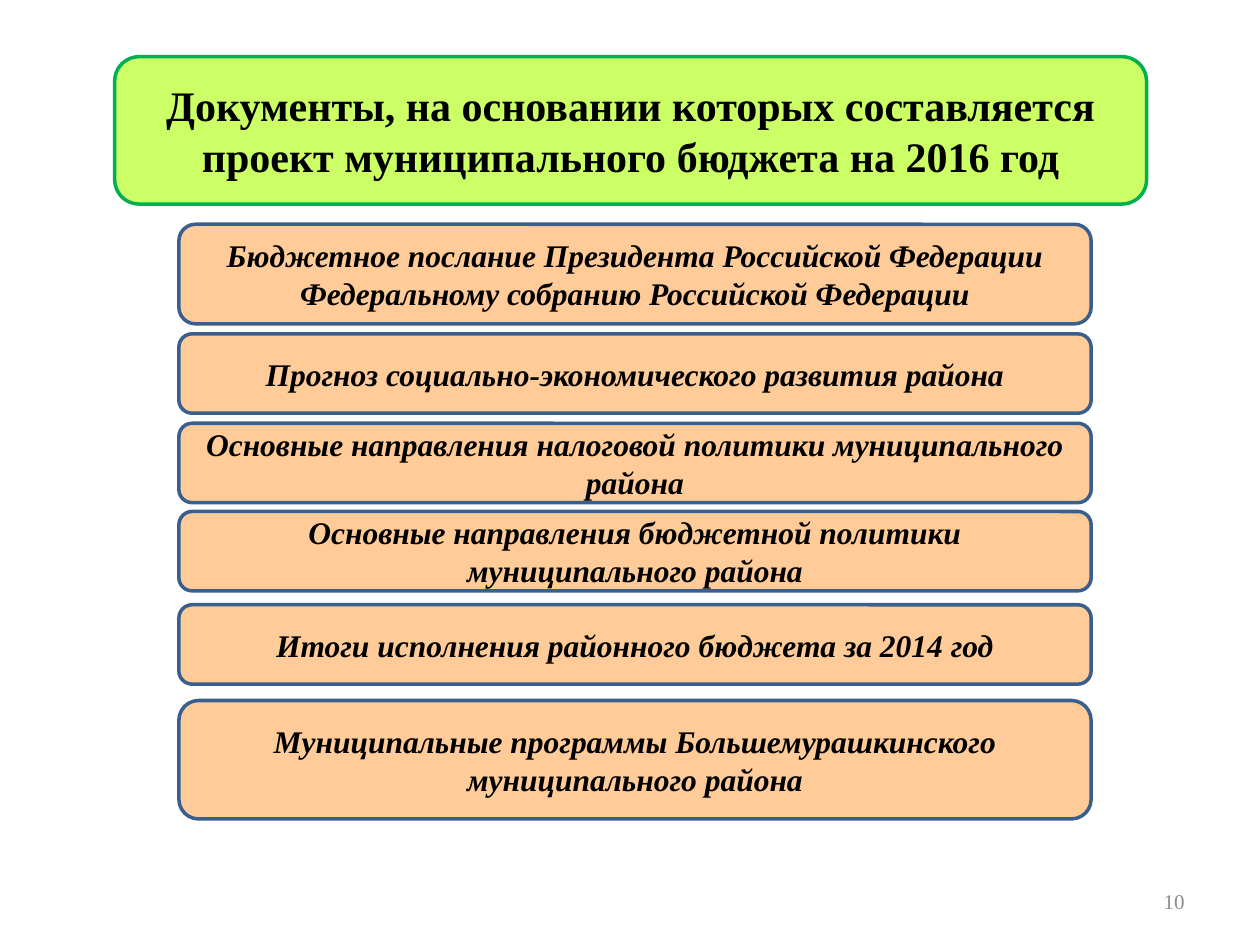
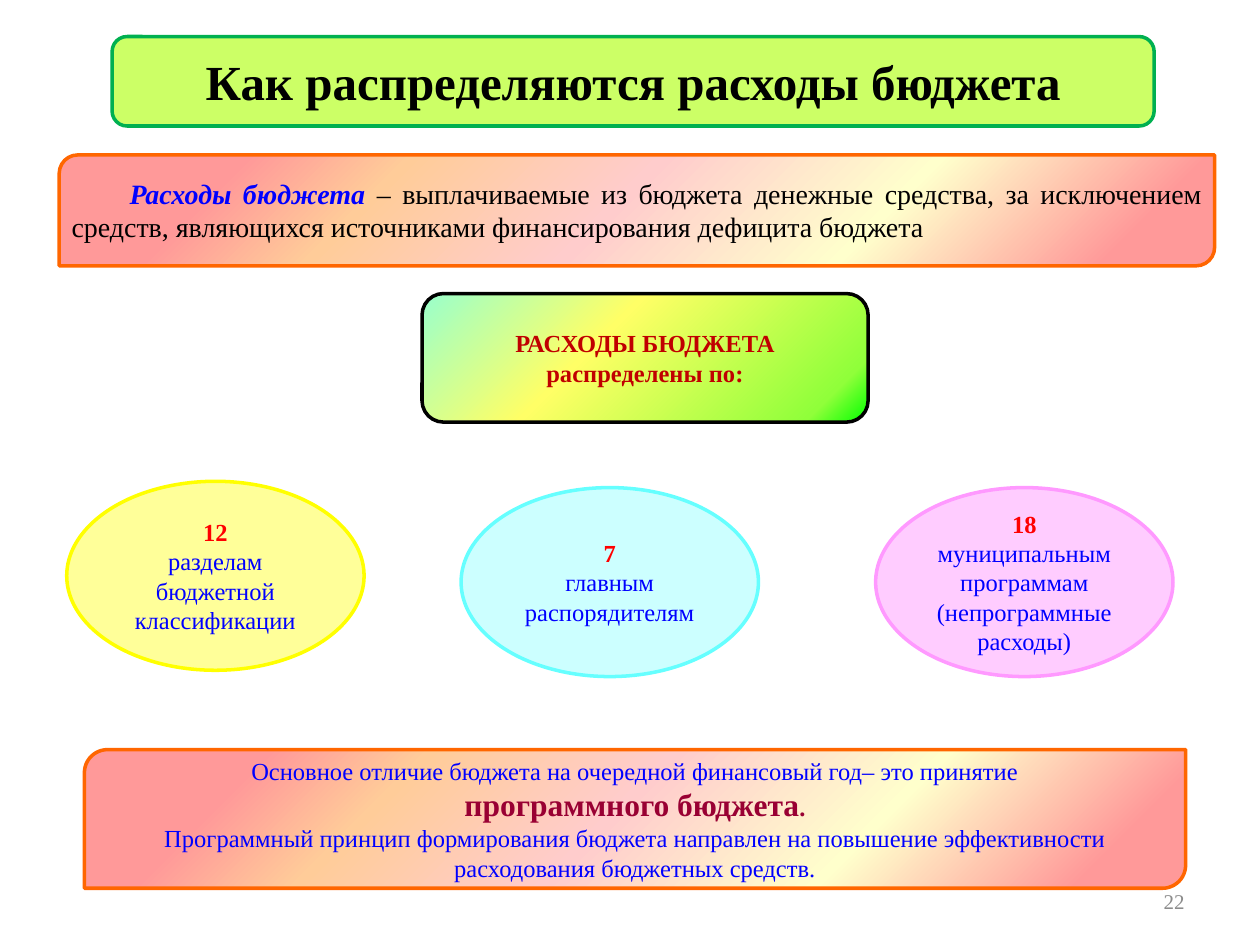
from dataclasses import dataclass

from lxml.etree import SubElement
from pptx import Presentation
from pptx.dml.color import RGBColor
from pptx.enum.shapes import MSO_SHAPE as Shape
from pptx.enum.text import MSO_ANCHOR as Anchor, PP_ALIGN as Align
from pptx.oxml.ns import qn
from pptx.util import Pt

PX = 9144  # 100 px to the inch
FONT = "Times New Roman"
BLACK, BLUE, RED, GREY = "000000", "0000FF", "FF0000", "8C8C8C"

PEACH_BANDS = 45, [(15, "FF9999"), (28, "FFCC99"), (48, "FFCCCC"),
                   (70, "FFFFCC"), (91, "FF9999")]
GREEN_BANDS = 225, [(0, "00FF00"), (11, "90FF3A"), (61, "FFFF66"),
                    (100, "99FFCC")]


@dataclass
class Style:
    size: int
    color: str = BLACK
    bold: bool = False
    italic: bool = False

    def apply(self, font):
        font.name = FONT
        font.size = Pt(self.size)
        font.bold = self.bold
        font.italic = self.italic
        font.color.rgb = rgb(self.color)


DOCUMENT = Style(18, bold=True, italic=True)
TERM = Style(16, BLUE, bold=True, italic=True)
DEFINITION = Style(16)
HEADING = Style(14, "C00000", bold=True)
COUNT = Style(14, RED, bold=True)
NOTE = Style(14, BLUE)
ACCENT = Style(18, "990033", bold=True)
ACCENT_STOP = Style(14, "990033", bold=True)
PAGE = Style(12, GREY)


def rgb(color):
    return RGBColor.from_string(color)


class Deck:
    def __init__(self, width, height):
        self.file = Presentation()
        self.file.slide_width = width * PX
        self.file.slide_height = height * PX
        self.slide = None

    def new_slide(self, page):
        self.slide = self.file.slides.add_slide(self.file.slide_layouts[6])
        self.label((717, 695, 233, 40), [[(page, PAGE)]], Align.RIGHT)

    def fill_text(self, frame, paragraphs, align, anchor=Anchor.MIDDLE, indent=0):
        """Fill a frame; each paragraph is a list of (text, style) runs."""
        frame.word_wrap = True
        frame.vertical_anchor = anchor
        for number, runs in enumerate(paragraphs):
            paragraph = frame.paragraphs[0] if number == 0 else frame.add_paragraph()
            paragraph.alignment = align
            if indent:
                paragraph._p.get_or_add_pPr().set("indent", str(indent * PX))
            for text, style in runs:
                run = paragraph.add_run()
                run.text = text
                style.apply(run.font if len(runs) > 1 else paragraph.font)

    def label(self, area, paragraphs, align, **layout):
        box = self.slide.shapes.add_textbox(*(n * PX for n in area))
        self.fill_text(box.text_frame, paragraphs, align, **layout)

    def panel(self, kind, area, fill, line, paragraphs=()):
        """Draw an outlined shape; fill is a colour or (angle, stops)."""
        shape = self.slide.shapes.add_shape(kind, *(n * PX for n in area))
        shape.shadow.inherit = False
        if isinstance(fill, str):
            shape.fill.solid()
            shape.fill.fore_color.rgb = rgb(fill)
        else:
            self.blend(shape, *fill)
        shape.line.color.rgb = rgb(line)
        shape.line.width = Pt(2)
        self.fill_text(shape.text_frame, paragraphs, Align.CENTER)

    def blend(self, shape, angle, stops):
        """Fill with a gradient running clockwise at the angle."""
        shape.fill.gradient()
        shape.fill.gradient_angle = 360 - angle
        stop_list = shape._element.spPr.find(qn("a:gradFill")).find(qn("a:gsLst"))
        for old_stop in list(stop_list):
            stop_list.remove(old_stop)
        for percent, color in stops:
            stop = SubElement(stop_list, qn("a:gs"), pos=str(percent * 1000))
            SubElement(stop, qn("a:srgbClr"), val=color)

    def title(self, area, text, size):
        self.panel(Shape.ROUNDED_RECTANGLE, area, "CCFF66", "00B050",
                   [[(text, Style(size, bold=True))]])

    def banner(self, area, paragraphs=()):
        self.panel(Shape.ROUND_2_DIAG_RECTANGLE, area, PEACH_BANDS, "FF6600",
                   paragraphs)


def add_documents(deck):
    deck.new_slide("10")
    deck.title((91, 45, 819, 117),
               "Документы, на основании которых составляется проект "
               "муниципального бюджета на 2016 год", 24)
    documents = [
        (178, 79, "Бюджетное послание Президента Российской Федерации "
                  "Федеральному собранию Российской Федерации"),
        (265, 63, "Прогноз социально-экономического развития района"),
        (336, 63, "Основные направления налоговой политики муниципального района"),
        (406, 63, "Основные направления бюджетной политики муниципального района"),
        (480, 63, "Итоги исполнения районного бюджета за 2014 год"),
        (556, 94, "Муниципальные программы Большемурашкинского "
                  "муниципального района"),
    ]
    for top, height, name in documents:
        deck.panel(Shape.ROUNDED_RECTANGLE, (142, top, 724, height),
                   "FFCC99", "3A5F8C", [[(name, DOCUMENT)]])


def add_expenses(deck):
    deck.new_slide("22")
    deck.title((89, 29, 827, 71), "Как распределяются расходы бюджета", 28)

    deck.banner((47, 123, 917, 88))
    deck.label((47, 135, 917, 64), [[
        ("Расходы бюджета ", TERM),
        ("– выплачиваемые из бюджета денежные средства, за исключением "
         "средств, являющихся источниками финансирования дефицита бюджета",
         DEFINITION),
    ]], Align.JUSTIFY, anchor=Anchor.TOP, indent=46)

    deck.panel(Shape.ROUNDED_RECTANGLE, (335, 233, 354, 102), GREEN_BANDS, BLACK,
               [[("РАСХОДЫ БЮДЖЕТА", HEADING)], [("распределены по:", HEADING)]])

    groupings = [
        (53, 382, "FFFF99", "FFFF00", "12", ["разделам бюджетной классификации"]),
        (366, 387, "CCFFFF", "66FFFF", "7", ["главным распорядителям"]),
        (695, 387, "FFCCFF", "FF99FF", "18",
         ["муниципальным программам", "(непрограммные расходы)"]),
    ]
    for left, top, fill, line, count, names in groupings:
        deck.panel(Shape.OVAL, (left, top, 236, 150), fill, line,
                   [[(count, COUNT)]] + [[(name, NOTE)] for name in names])

    deck.banner((67, 595, 874, 110), [
        [("Основное отличие бюджета на очередной финансовый год– это принятие",
          NOTE)],
        [("программного бюджета", ACCENT), (".", ACCENT_STOP)],
        [("Программный принцип формирования бюджета направлен на повышение "
          "эффективности расходования бюджетных средств.", NOTE)],
    ])


def main():
    deck = Deck(1000, 750)
    add_documents(deck)
    add_expenses(deck)
    deck.file.save("out.pptx")


if __name__ == "__main__":
    main()
